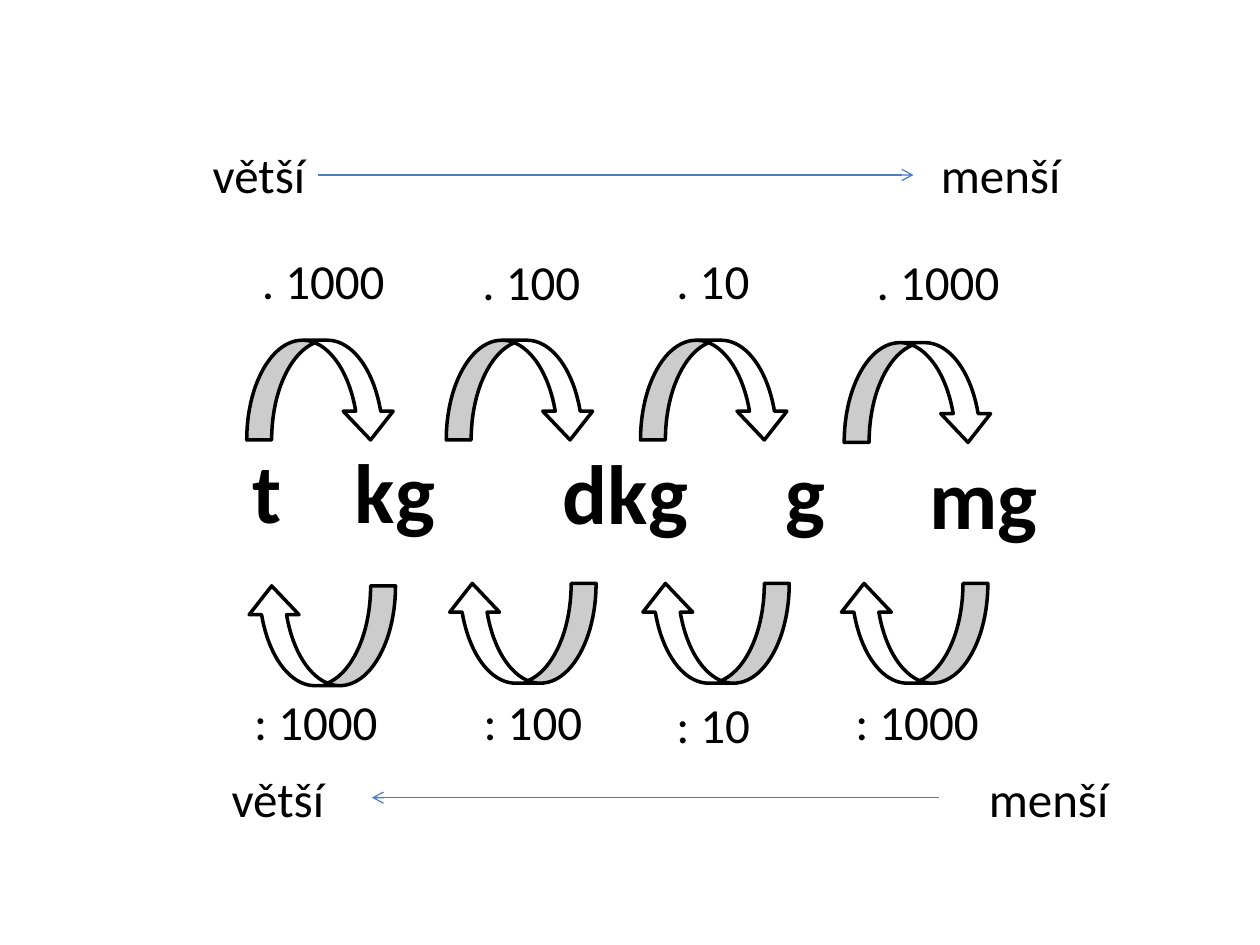
from lxml import etree
from pptx import Presentation
from pptx.dml.color import RGBColor
from pptx.enum.shapes import MSO_CONNECTOR, MSO_SHAPE
from pptx.enum.text import MSO_AUTO_SIZE
from pptx.oxml.ns import qn
from pptx.util import Pt

ARC = MSO_SHAPE.CURVED_DOWN_ARROW
STRAIGHT = MSO_CONNECTOR.STRAIGHT
FIT = MSO_AUTO_SIZE.SHAPE_TO_FIT_TEXT
BLACK = RGBColor(0x00, 0x00, 0x00)
WHITE = RGBColor(0xFF, 0xFF, 0xFF)
BLUE = RGBColor(0x4B, 0x7E, 0xBC)

# text, left, top, width
UNITS = [
    ("t", 137.5, 247.5, 31.7),
    ("kg", 195.8, 247.5, 60.5),
    ("dkg", 314.6, 248.4, 86.4),
    ("g", 442, 248.4, 37.4),
    ("mg", 524.2, 251.3, 77),
]
LABELS = [
    ("větší", 114.5, 79.2, 67.7),
    ("menší", 530.6, 79.2, 83.5),
    (". 1000", 142.6, 139.7, 85.7),
    (". 100", 268.6, 140.4, 71.3),
    (". 10", 379.4, 139.7, 56.9),
    (". 1000", 493.9, 140.4, 85.7),
    (": 1000", 138.2, 391.7, 86.4),
    (": 100", 269.3, 391.7, 72),
    (": 10", 379.4, 393.1, 57.6),
    (": 1000", 481.7, 391.7, 86.4),
    ("větší", 125.3, 435.6, 67.7),
    ("menší", 558, 435.6, 83.5),
]
# left, top, turn
ARCS = [
    (141, 194.4, 0), (255, 194.4, 0), (366, 194.4, 0), (482.4, 195.8, 0),
    (141, 334.8, 180), (255.6, 333.4, 180), (366, 333.4, 180), (479.5, 333.4, 180),
]


class Sketch:
    font = "Calibri"

    def __init__(self, slide):
        self.slide = slide

    def text(self, words, left, top, width, size, bold=False):
        box = self.slide.shapes.add_textbox(
            Pt(left), Pt(top), Pt(width), Pt(size * 1.22 + 7.2))
        frame = box.text_frame
        frame.word_wrap = False
        frame.auto_size = FIT
        para = frame.paragraphs[0]
        para.text = words
        para.font.name = self.font
        para.font.size = Pt(size)
        para.font.bold = bold
        para.font.color.rgb = BLACK

    def arc(self, left, top, turn):
        shape = self.slide.shapes.add_shape(
            ARC, Pt(left), Pt(top), Pt(85), Pt(57))
        shape.adjustments[2] = 0.288
        shape.rotation = turn
        shape.shadow.inherit = False
        shape.fill.solid()
        shape.fill.fore_color.rgb = WHITE
        shape.line.color.rgb = BLACK
        shape.line.width = Pt(2)

    def arrow(self, start, end, y):
        link = self.slide.shapes.add_connector(
            STRAIGHT, Pt(start), Pt(y), Pt(end), Pt(y))
        link.line.color.rgb = BLUE
        link.line.width = Pt(0.75)
        etree.SubElement(link.line._get_or_add_ln(), qn("a:tailEnd"), type="arrow")
        etree.SubElement(link._element.spPr, qn("a:effectLst"))


def main():
    deck = Presentation()
    deck.slide_width, deck.slide_height = Pt(720), Pt(540)
    sketch = Sketch(deck.slides.add_slide(deck.slide_layouts[6]))
    for unit in UNITS:
        sketch.text(*unit, size=48, bold=True)
    for arc in ARCS:
        sketch.arc(*arc)
    for label in LABELS:
        sketch.text(*label, size=28)
    sketch.arrow(181.5, 522, 100)
    sketch.arrow(536.5, 212.5, 455.8)
    deck.save("out.pptx")


if __name__ == "__main__":
    main()
